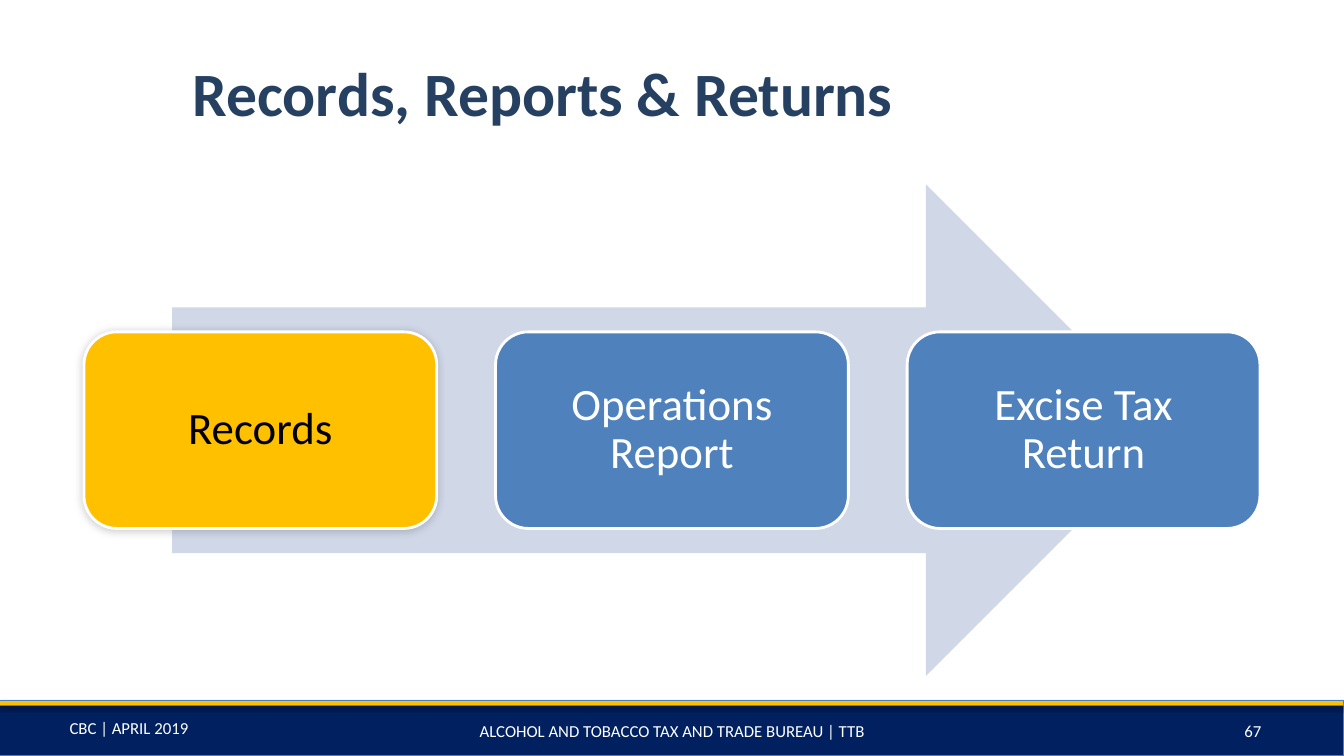
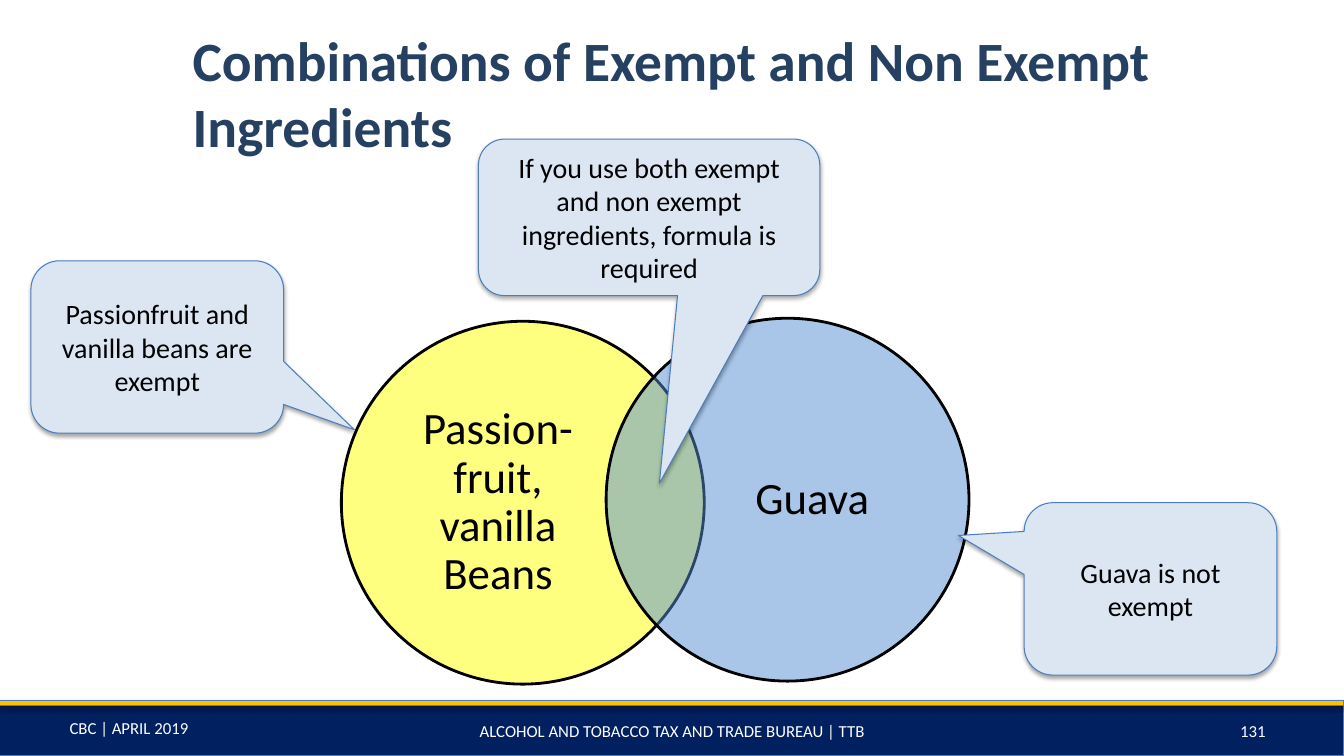
"""Build two training slides: a records-to-returns process and an ingredient overlap."""
from lxml.etree import SubElement
from pptx import Presentation
from pptx.dml.color import RGBColor
from pptx.enum.shapes import MSO_SHAPE as Preset
from pptx.enum.text import MSO_ANCHOR as Anchor, MSO_AUTO_SIZE as AutoSize, PP_ALIGN as Align
from pptx.oxml.ns import qn
from pptx.util import Inches, Pt

COLORS = {
    "title": "254061", "navy": "002060", "gold": "FFC000", "outline": "4B7EBC",
    "white": "FFFFFF", "black": "000000", "arrow": "D0D8E8", "step": "4F81BD",
    "callout": "DCE6F2", "yellow": "FFFF00", "blue": "558ED5",
}
FONT = "Calibri"
WIDTH, HEIGHT = Inches(13.33), Inches(7.5)
SOFT_SHADOW = {"alpha": 35, "blur": 3.1, "distance": 1.8, "angle": 90}
STEP_SHADOW = {"alpha": 20, "blur": 6, "distance": 1, "angle": 135}


def color(name):
    """Return the named colour."""
    return RGBColor.from_string(COLORS[name])


def place(left, top, width, height):
    """Turn percentages of the slide into lengths."""
    return (int(WIDTH * left / 100), int(HEIGHT * top / 100),
            int(WIDTH * width / 100), int(HEIGHT * height / 100))


def write(shape, text, size, ink="white", align=Align.CENTER, bold=False, spacing=None):
    """Set one formatted paragraph, vertically centred."""
    frame = shape.text_frame
    frame.word_wrap = True
    frame.auto_size = AutoSize.NONE
    frame.vertical_anchor = Anchor.MIDDLE
    paragraph = frame.paragraphs[0]
    paragraph.text = text
    paragraph.alignment = align
    paragraph.line_spacing = spacing
    font = paragraph.font
    font.name, font.size, font.bold = FONT, Pt(size), bold
    font.color.rgb = color(ink)


def set_margins(shape, left, top, right, bottom):
    """Set the text margins in inches."""
    frame = shape.text_frame
    frame.margin_left, frame.margin_top = Inches(left), Inches(top)
    frame.margin_right, frame.margin_bottom = Inches(right), Inches(bottom)


def add_alpha(fill_color, percent):
    """Give a colour element an opacity."""
    SubElement(fill_color, qn("a:alpha"), val=str(percent * 1000))


def add_shadow(shape, alpha, blur, distance, angle):
    """Add an outer black shadow."""
    effects = shape._element.spPr.find(qn("a:effectLst"))
    outer = SubElement(effects, qn("a:outerShdw"), blurRad=str(Pt(blur)), dist=str(Pt(distance)),
                       dir=str(angle * 60000), algn="ctr", rotWithShape="0")
    add_alpha(SubElement(outer, qn("a:srgbClr"), val=COLORS["black"]), alpha)


def add_preset(slide, preset, box, fill, line=None, line_width=0.75, shadow=None, opacity=None):
    """Draw a filled preset shape at a box of slide percentages."""
    shape = slide.shapes.add_shape(preset, *place(*box))
    shape.shadow.inherit = False
    shape.fill.solid()
    shape.fill.fore_color.rgb = color(fill)
    if opacity:
        add_alpha(shape._element.spPr.find(qn("a:solidFill"))[0], opacity)
    if line:
        shape.line.color.rgb = color(line)
        shape.line.width = Pt(line_width)
    else:
        shape.line.fill.background()
    if shadow:
        add_shadow(shape, **shadow)
    return shape


def add_base(presentation, title, title_size, number):
    """Add a slide with its title, bands and footer texts."""
    slide = presentation.slides.add_slide(presentation.slide_layouts[5])
    for band_height, fill in ((7.33, "navy"), (0.67, "gold")):
        add_preset(slide, Preset.RECTANGLE, (0, 92.67, 100, band_height), fill,
                   "outline", shadow=SOFT_SHADOW)
    heading = slide.shapes.title
    heading.left, heading.top, heading.width, heading.height = place(13.58, 6.67, 81.45, 11.07)
    write(heading, title, title_size, "title", Align.LEFT, bold=True)
    footers = (
        ("CBC | APRIL 2019", 0, 93.6, 19.2),
        ("ALCOHOL AND TOBACCO TAX AND TRADE BUREAU | TTB", 26.7, 94, 46.65),
        (str(number), 86.55, 94, 13.35),
    )
    for text, left, top, width in footers:
        write(slide.shapes.add_textbox(*place(left, top, width, 5.33)), text, 12)
    return slide


def add_process(slide, steps, left=6.25, top=24.4, width=87.5, height=65):
    """Draw equal steps over a wide arrow."""
    add_preset(slide, Preset.RIGHT_ARROW,
               (left + width * 0.075, top, width * 0.85, height), "arrow")
    step_width = width * 0.3
    gap = (width - step_width * len(steps)) / (len(steps) - 1)
    for index, (text, fill, ink, shadow) in enumerate(steps):
        box = (left + index * (step_width + gap), top + height * 0.3, step_width, height * 0.4)
        step = add_preset(slide, Preset.ROUNDED_RECTANGLE, box, fill, "white", 2, shadow)
        set_margins(step, 0.13, 0.13, 0.13, 0.13)
        write(step, text, 32, ink, spacing=0.9)


def add_circle(slide, text, left, top, fill, left_margin, right_margin):
    """Draw one translucent circle of the overlap diagram."""
    circle = add_preset(slide, Preset.OVAL, (left, top, 27, 48), fill, "black", 2, opacity=50)
    set_margins(circle, left_margin, 0, right_margin, 0)
    write(circle, text, 32, "black", spacing=0.9)


def add_callout(slide, text, box, pointer):
    """Draw a rounded callout with its pointer tip."""
    callout = add_preset(slide, Preset.ROUNDED_RECTANGULAR_CALLOUT, box, "callout",
                         "outline", shadow=SOFT_SHADOW)
    callout.adjustments[0], callout.adjustments[1] = pointer
    set_margins(callout, 0.2, 0, 0.2, 0)
    write(callout, text, 20, "black")


def main():
    """Build and save the presentation."""
    presentation = Presentation()
    presentation.slide_width, presentation.slide_height = WIDTH, HEIGHT

    slide = add_base(presentation, "Records, Reports & Returns", 44, 67)
    add_process(slide, (
        ("Records", "gold", "black", STEP_SHADOW),
        ("Operations Report", "step", "white", None),
        ("Excise Tax Return", "step", "white", None),
    ))

    slide = add_base(presentation, "Combinations of Exempt and Non Exempt Ingredients", 39.6, 131)
    add_circle(slide, "Passion- fruit, vanilla Beans", 25.4, 42.5, "yellow", 0, 0.49)
    add_circle(slide, "Guava", 45.1, 42.1, "blue", 0.49, 0)
    add_callout(slide, "Passionfruit and vanilla beans are exempt",
                (2.3, 34.5, 18.8, 22.8), (0.78, 0.48))
    add_callout(slide, "If you use both exempt and non exempt ingredients, formula is required",
                (35.6, 18.4, 25.4, 20.7), (0.03, 1.7))
    add_callout(slide, "Guava is not exempt", (76.2, 66.5, 18.8, 22.8), (-0.76, -0.31))

    presentation.save("out.pptx")


if __name__ == "__main__":
    main()
